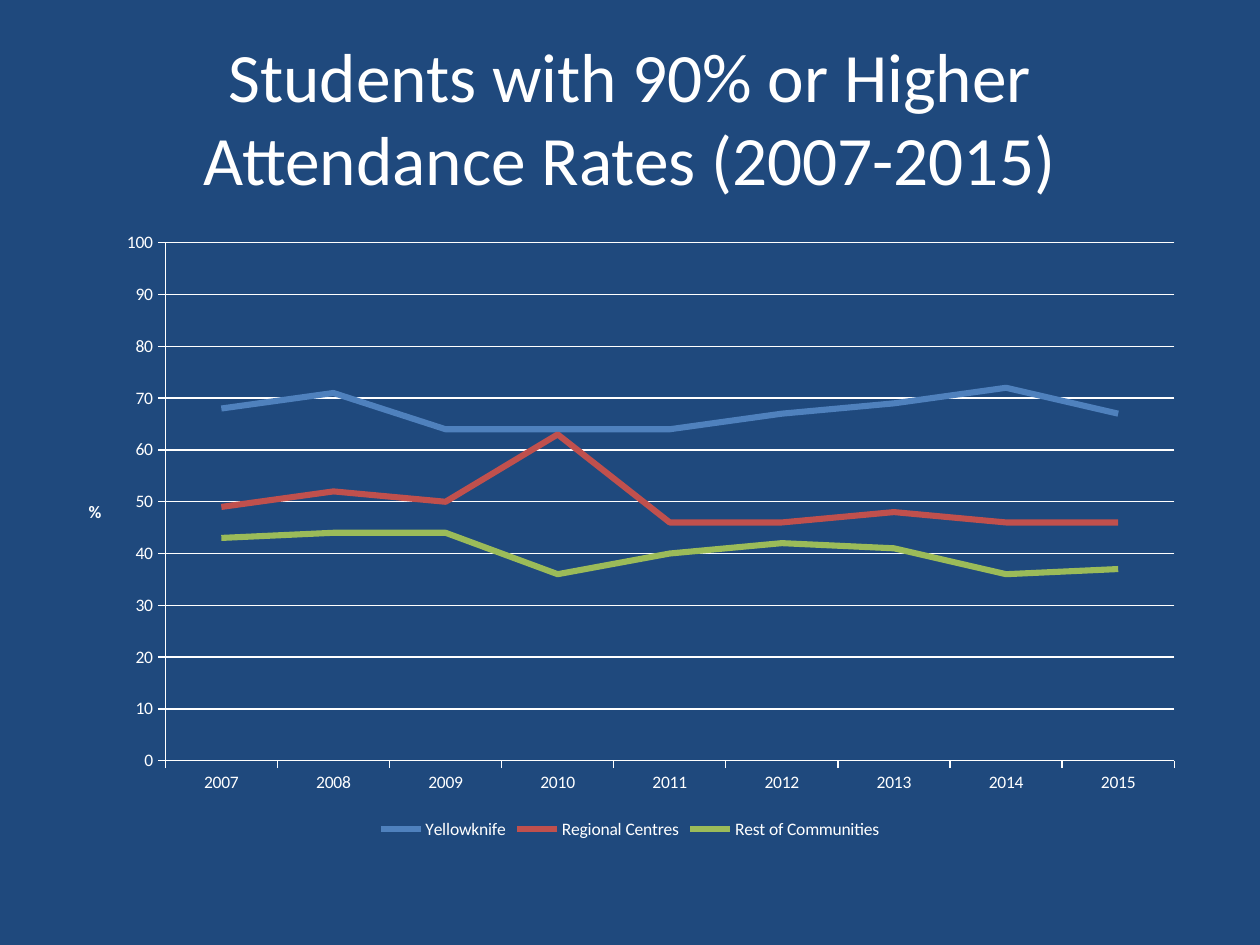
from pptx import Presentation
from pptx.chart.data import CategoryChartData
from pptx.dml.color import RGBColor
from pptx.enum.chart import XL_CHART_TYPE, XL_LEGEND_POSITION, XL_MARKER_STYLE, XL_TICK_MARK
from pptx.enum.text import MSO_ANCHOR, PP_ALIGN
from pptx.util import Pt

LINE = XL_CHART_TYPE.LINE
BOTTOM = XL_LEGEND_POSITION.BOTTOM
NO_MARKER = XL_MARKER_STYLE.NONE
OUTSIDE = XL_TICK_MARK.OUTSIDE
MIDDLE = MSO_ANCHOR.MIDDLE
CENTER = PP_ALIGN.CENTER

COLORS = {
    "background": "1F497D",
    "text": "FFFFFF",
    "Yellowknife": "4F81BD",
    "Regional Centres": "C0504D",
    "Rest of Communities": "9BBB59",
}
YEARS = [str(year) for year in range(2007, 2016)]
ATTENDANCE = {
    "Yellowknife": (68, 71, 64, 64, 64, 67, 69, 72, 67),
    "Regional Centres": (49, 52, 50, 63, 46, 46, 48, 46, 46),
    "Rest of Communities": (43, 44, 44, 36, 40, 42, 41, 36, 37),
}


def rgb(name):
    return RGBColor.from_string(COLORS[name])


def style_font(font, size, bold=False, color="text"):
    font.name = "Calibri"
    font.size = Pt(size)
    font.bold = bold
    font.color.rgb = rgb(color)


def write(tf, text, align=CENTER, **style):
    """Put one formatted run in the first paragraph of a text frame."""
    p = tf.paragraphs[0]
    p.alignment = align
    r = p.add_run()
    r.text = text
    style_font(r.font, **style)


def style_line(line, color, width):
    line.color.rgb = rgb(color)
    line.width = Pt(width)


class SlideBuilder:
    """Holds the chart style and the slide being built."""

    chart_size = 10
    axis_width = 0.75
    series_width = 3.5

    def __init__(self, prs):
        self.s = prs.slides.add_slide(prs.slide_layouts[6])
        fill = self.s.background.fill
        fill.solid()
        fill.fore_color.rgb = rgb("background")

    def title(self, text, x, y, w, h, size):
        sp = self.s.shapes.add_textbox(Pt(x), Pt(y), Pt(w), Pt(h))
        tf = sp.text_frame
        tf.word_wrap = True
        tf.vertical_anchor = MIDDLE
        write(tf, text, size=size)

    def line_chart(self, categories, series, x, y, w, h, unit):
        data = CategoryChartData(number_format="0")
        data.categories = categories
        for name, values in series.items():
            data.add_series(name, values)
        chart = self.s.shapes.add_chart(LINE, Pt(x), Pt(y), Pt(w), Pt(h), data).chart
        chart.has_title = False
        style_font(chart.font, self.chart_size)
        chart.plots[0].vary_by_categories = False
        for line in chart.plots[0].series:
            line.smooth = False
            line.marker.style = NO_MARKER
            style_line(line.format.line, line.name, self.series_width)
        chart.has_legend = True
        chart.legend.position = BOTTOM
        chart.legend.include_in_layout = False
        style_font(chart.legend.font, self.chart_size)
        self.axes(chart, unit)

    def axes(self, chart, unit):
        for axis in (chart.category_axis, chart.value_axis):
            axis.major_tick_mark = OUTSIDE
            style_line(axis.format.line, "text", self.axis_width)
            style_font(axis.tick_labels.font, self.chart_size)
        axis = chart.value_axis
        axis.minimum_scale, axis.maximum_scale, axis.major_unit = 0, 100, 10
        axis.tick_labels.number_format = "0"
        axis.tick_labels.number_format_is_linked = False
        axis.has_major_gridlines = True
        style_line(axis.major_gridlines.format.line, "text", self.axis_width)
        tf = axis.axis_title.text_frame
        write(tf, unit, size=self.chart_size, bold=True)
        body = tf._txBody.bodyPr
        body.set("rot", "0")
        body.set("vert", "horz")


def main():
    prs = Presentation()
    prs.slide_width, prs.slide_height = Pt(720), Pt(540)
    slide = SlideBuilder(prs)
    slide.title("Students with 90% or Higher Attendance Rates (2007-2015)",
                36, 21.6, 648, 90, size=39.6)
    slide.line_chart(YEARS, ATTENDANCE, 36, 126, 648, 356.4, unit="%")
    prs.save("out.pptx")


if __name__ == "__main__":
    main()
